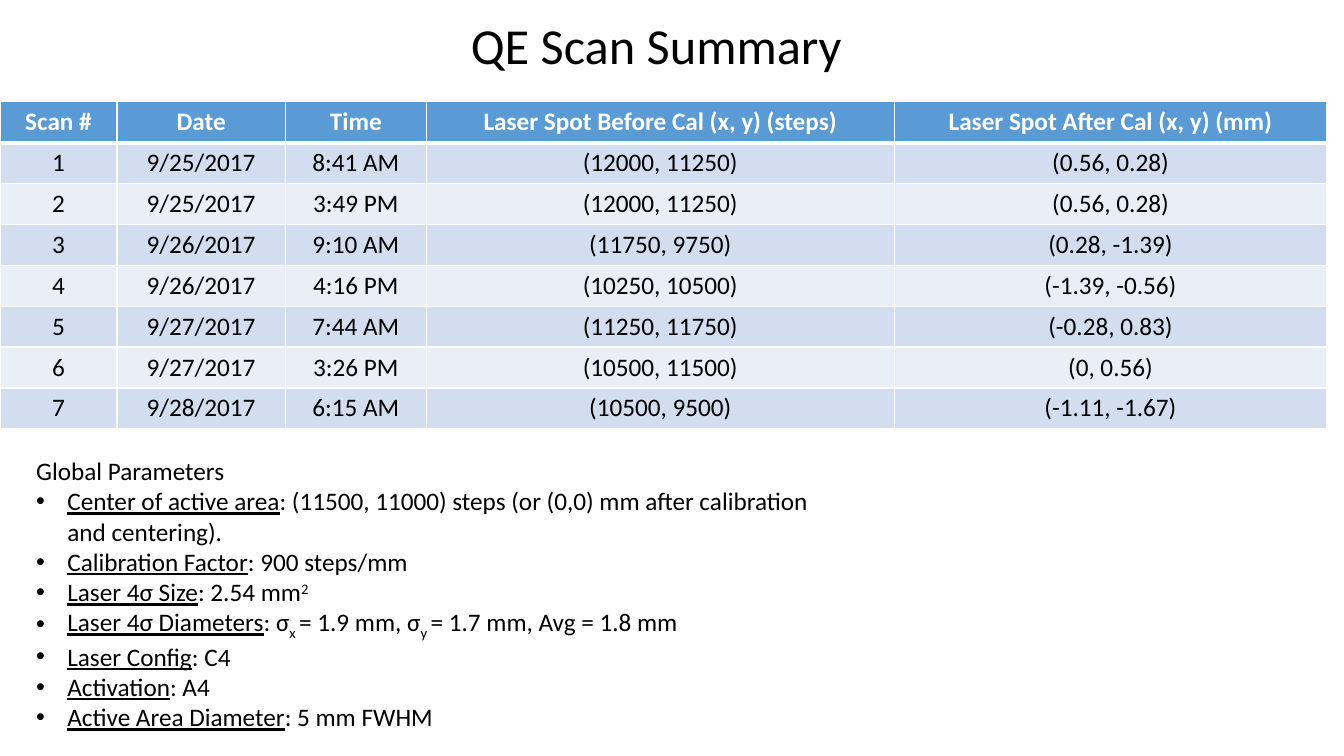
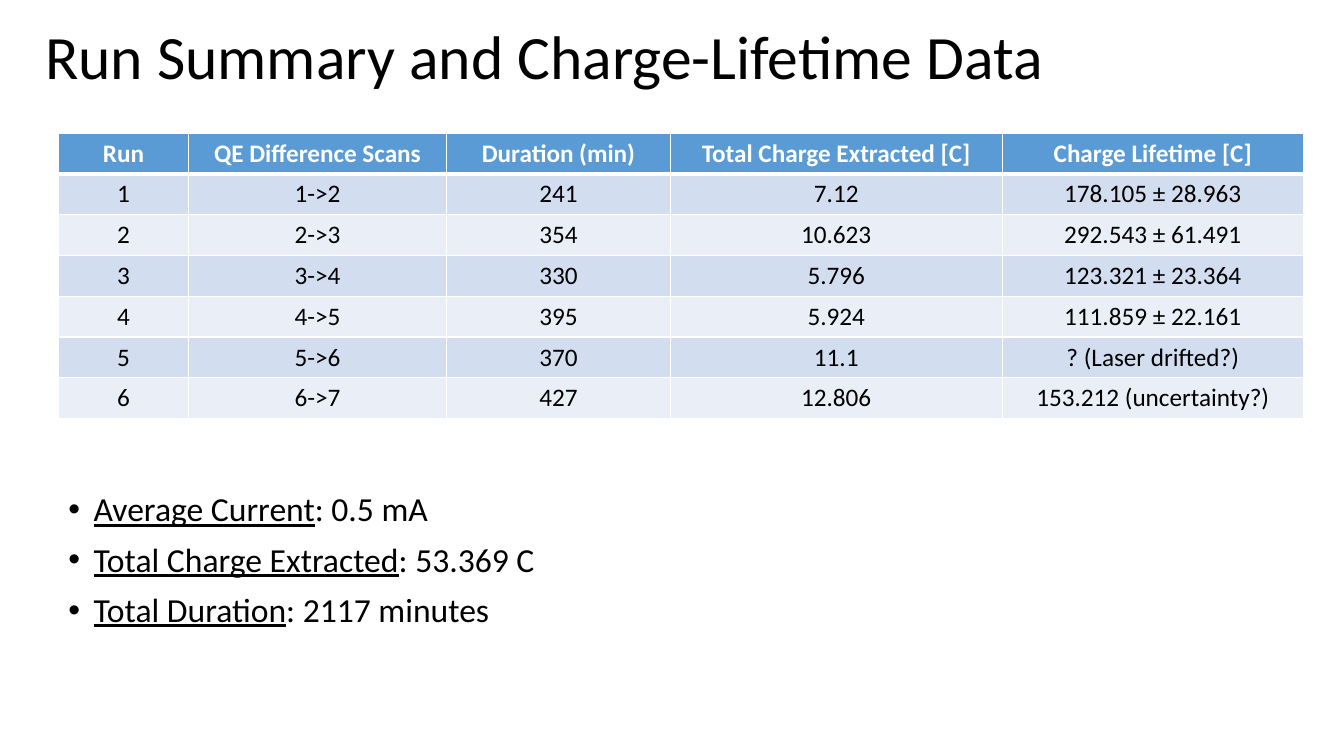
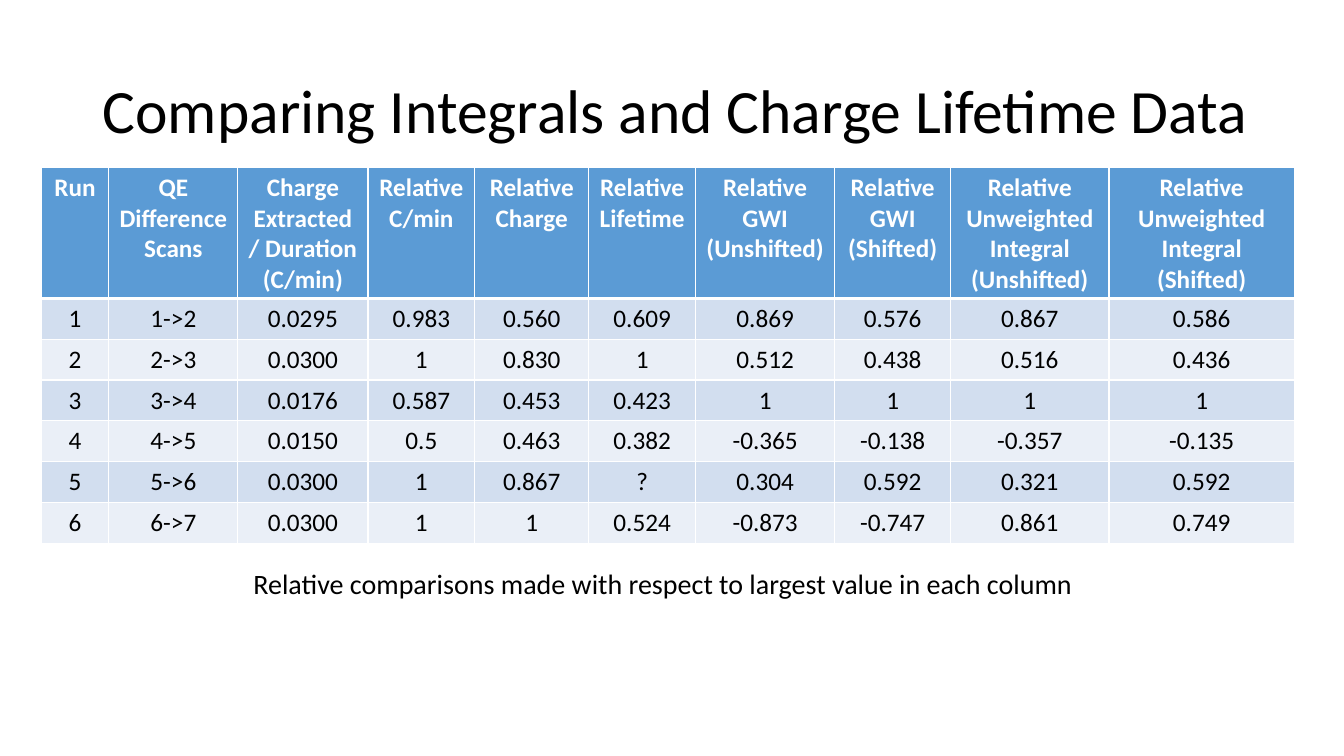
from lxml.etree import SubElement
from pptx import Presentation
from pptx.dml.color import RGBColor
from pptx.enum.text import MSO_ANCHOR, PP_ALIGN
from pptx.oxml.ns import qn
from pptx.util import Inches, Pt

FONT = "Calibri"
BLACK = RGBColor(0x00, 0x00, 0x00)
WHITE = RGBColor(0xFF, 0xFF, 0xFF)
HEADER_BLUE = RGBColor(0x5B, 0x9B, 0xD5)
BANDS = (RGBColor(0xEA, 0xEF, 0xF7), RGBColor(0xD2, 0xDE, 0xEF))
ROW_HEIGHT = 0.405
TITLE_STYLE = {"size": 44, "anchor": MSO_ANCHOR.MIDDLE, "spacing": 0.9}

# Raised and lowered parts of a line, as a percentage of the font size
BASELINES = {"2": 30, "x ": -25, "y ": -25}


def add_text(slide, box, lines, size, align=PP_ALIGN.LEFT, anchor=MSO_ANCHOR.TOP,
             spacing=1.0, before=0, indent=0.31):
    """Each line is a tuple of parts; several parts make a bullet with an underlined label."""
    frame = slide.shapes.add_textbox(*map(Inches, box)).text_frame
    frame.word_wrap = True
    frame.vertical_anchor = anchor
    for index, parts in enumerate(lines):
        paragraph = frame.paragraphs[0] if index == 0 else frame.add_paragraph()
        paragraph.alignment = align
        paragraph.line_spacing = spacing
        paragraph.space_before = Pt(before)
        bulleted = len(parts) > 1
        if bulleted:
            properties = paragraph._p.get_or_add_pPr()
            properties.set("marL", str(Inches(indent)))
            properties.set("indent", str(-Inches(indent)))
            SubElement(properties, qn("a:buFont"), typeface="Arial")
            SubElement(properties, qn("a:buChar"), char="•")
        for position, part in enumerate(parts):
            run = paragraph.add_run()
            run.text = part
            run.font.name = FONT
            run.font.size = Pt(size)
            run.font.color.rgb = BLACK
            if bulleted and position == 0:
                run.font.underline = True
            if part in BASELINES:
                run.font._element.set("baseline", str(BASELINES[part] * 1000))


def add_data_table(slide, left, top, widths, rows, header_height=ROW_HEIGHT):
    heights = [header_height] + [ROW_HEIGHT] * (len(rows) - 1)
    table = slide.shapes.add_table(len(rows), len(widths), Inches(left), Inches(top),
                                   Inches(sum(widths)), Inches(sum(heights))).table
    for column, width in zip(table.columns, widths):
        column.width = Inches(width)
    for row, height in zip(table.rows, heights):
        row.height = Inches(height)
    for row_index, values in enumerate(rows):
        is_header = row_index == 0
        for column_index, value in enumerate(values):
            cell = table.cell(row_index, column_index)
            # White grid, with a thicker rule under the header
            borders = {"lnL": 1, "lnR": 1, "lnT": 3 if row_index == 1 else 1,
                       "lnB": 3 if is_header else 1}
            for edge, weight in borders.items():
                line = SubElement(cell._tc.get_or_add_tcPr(), qn(f"a:{edge}"),
                                  w=str(Pt(weight)))
                SubElement(SubElement(line, qn("a:solidFill")), qn("a:srgbClr"),
                           val=str(WHITE))
            cell.fill.solid()
            cell.fill.fore_color.rgb = HEADER_BLUE if is_header else BANDS[row_index % 2]
            paragraph = cell.text_frame.paragraphs[0]
            paragraph.text = value
            paragraph.alignment = PP_ALIGN.CENTER
            font = paragraph.runs[0].font
            font.name = FONT
            font.size = Pt(18)
            font.bold = is_header
            font.color.rgb = WHITE if is_header else BLACK


presentation = Presentation()
presentation.slide_width = Inches(13.33)
presentation.slide_height = Inches(7.5)
blank = presentation.slide_layouts[6]

# Slide 1: scans and global parameters
scan_slide = presentation.slides.add_slide(blank)
add_data_table(scan_slide, 0, 1.01, (1.16, 1.67, 1.4, 4.64, 4.29), [
    ("Scan #", "Date", "Time", "Laser Spot Before Cal (x, y) (steps)",
     "Laser Spot After Cal (x, y) (mm)"),
    ("1", "9/25/2017", "8:41 AM", "(12000, 11250)", "(0.56, 0.28)"),
    ("2", "9/25/2017", "3:49 PM", "(12000, 11250)", "(0.56, 0.28)"),
    ("3", "9/26/2017", "9:10 AM", "(11750, 9750)", "(0.28, -1.39)"),
    ("4", "9/26/2017", "4:16 PM", "(10250, 10500)", "(-1.39, -0.56)"),
    ("5", "9/27/2017", "7:44 AM", "(11250, 11750)", "(-0.28, 0.83)"),
    ("6", "9/27/2017", "3:26 PM", "(10500, 11500)", "(0, 0.56)"),
    ("7", "9/28/2017", "6:15 AM", "(10500, 9500)", "(-1.11, -1.67)"),
])
add_text(scan_slide, (2.73, 0.09, 7.56, 0.71), [("QE Scan Summary",)], 36,
         align=PP_ALIGN.CENTER)
add_text(scan_slide, (0.26, 4.47, 8.15, 2.83), [
    ("Global Parameters",),
    ("Center of active area",
     ": (11500, 11000) steps (or (0,0) mm after calibration and centering)."),
    ("Calibration Factor", ": 900 steps/mm"),
    ("Laser 4σ Size", ": 2.54 mm", "2"),
    ("Laser 4σ Diameters", ": σ", "x ", "= 1.9 mm, σ", "y ", "= 1.7 mm, Avg = 1.8 mm"),
    ("Laser Config", ": C4"),
    ("Activation", ": A4"),
    ("Active Area Diameter", ": 5 mm FWHM"),
], 18)

# Slide 2: runs and charge lifetime
run_slide = presentation.slides.add_slide(blank)
add_text(run_slide, (0.35, -0.13, 12.81, 1.45),
         [("Run Summary and Charge-Lifetime Data",)], **TITLE_STYLE)
add_text(run_slide, (0.58, 4.84, 5.45, 1.55), [
    ("Average Current", ": 0.5 mA"),
    ("Total Charge Extracted", ": 53.369 C"),
    ("Total Duration", ": 2117 minutes"),
], 24, spacing=0.9, before=10, indent=0.25)
add_data_table(run_slide, 0.58, 1.32, (1.29, 2.56, 2.22, 3.29, 2.99), [
    ("Run", "QE Difference Scans", "Duration (min)", "Total Charge Extracted [C]",
     "Charge Lifetime [C]"),
    ("1", "1->2", "241", "7.12", "178.105 ± 28.963"),
    ("2", "2->3", "354", "10.623", "292.543 ± 61.491"),
    ("3", "3->4", "330", "5.796", "123.321 ± 23.364"),
    ("4", "4->5", "395", "5.924", "111.859 ± 22.161"),
    ("5", "5->6", "370", "11.1", "? (Laser drifted?)"),
    ("6", "6->7", "427", "12.806", "153.212 (uncertainty?)"),
])

# Slide 3: integrals against charge lifetime
integral_slide = presentation.slides.add_slide(blank)
add_text(integral_slide, (0.92, 0.4, 12.15, 1.45),
         [("Comparing Integrals and Charge Lifetime Data",)], **TITLE_STYLE)
add_data_table(
    integral_slide, 0.41, 1.66,
    (0.67, 1.28, 1.29, 1.06, 1.13, 1.06, 1.38, 1.15, 1.57, 1.84), [
        ("Run", "QE Difference Scans", "Charge Extracted / Duration (C/min)",
         "Relative C/min", "Relative Charge", "Relative Lifetime",
         "Relative GWI (Unshifted)", "Relative GWI (Shifted)",
         "Relative Unweighted Integral (Unshifted)",
         "Relative Unweighted Integral (Shifted)"),
        ("1", "1->2", "0.0295", "0.983", "0.560", "0.609", "0.869", "0.576", "0.867", "0.586"),
        ("2", "2->3", "0.0300", "1", "0.830", "1", "0.512", "0.438", "0.516", "0.436"),
        ("3", "3->4", "0.0176", "0.587", "0.453", "0.423", "1", "1", "1", "1"),
        ("4", "4->5", "0.0150", "0.5", "0.463", "0.382", "-0.365", "-0.138", "-0.357", "-0.135"),
        ("5", "5->6", "0.0300", "1", "0.867", "?", "0.304", "0.592", "0.321", "0.592"),
        ("6", "6->7", "0.0300", "1", "1", "0.524", "-0.873", "-0.747", "0.861", "0.749"),
    ], header_height=1.3)
add_text(integral_slide, (0.51, 5.57, 12.13, 0.44),
         [("Relative comparisons made with respect to largest value in each column",)], 20,
         align=PP_ALIGN.CENTER)

presentation.save("out.pptx")
